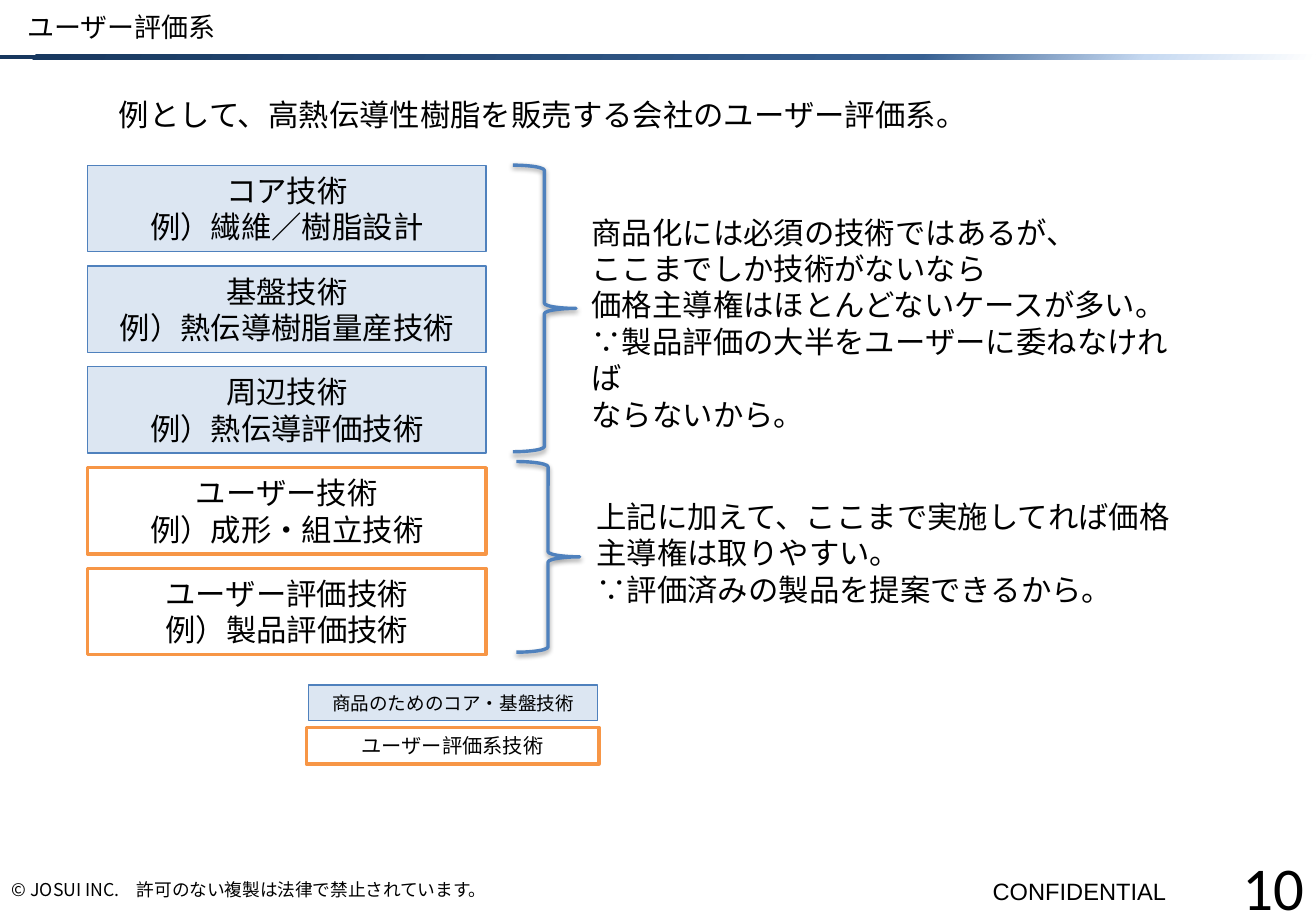
from dataclasses import dataclass

from lxml.etree import SubElement
from pptx import Presentation
from pptx.dml.color import RGBColor
from pptx.enum.shapes import MSO_SHAPE
from pptx.enum.text import MSO_ANCHOR, PP_ALIGN
from pptx.oxml.ns import qn
from pptx.shapes.autoshape import Shape
from pptx.slide import Slide
from pptx.util import Inches, Pt

COLORS = {
    "text": "000000",
    "core_fill": "DCE6F2",
    "core_line": "4F81BD",
    "user_fill": "FFFFFF",
    "user_line": "F79646",
    "shadow": "000000",
}
RULE_STOPS = [(0, "17375E"), (70, "376092"), (87, "C6D9F1"), (100, "FFFFFF")]
JAPANESE_FONT = "Noto Sans CJK JP"
STACK_LEFT, STACK_TOP, STACK_PITCH = 0.72, 1.36, 0.83
STACK_WIDTH, STACK_HEIGHT = 3.28, 0.71


@dataclass(frozen=True)
class Area:
    left: float
    top: float
    width: float
    height: float

    def lengths(self) -> list[int]:
        return [Inches(v) for v in (self.left, self.top, self.width, self.height)]


@dataclass(frozen=True)
class Caption:
    area: Area
    lines: tuple[str, ...]
    size: float = 18
    font: str = "Calibri"
    anchor: MSO_ANCHOR = MSO_ANCHOR.TOP
    align: PP_ALIGN = PP_ALIGN.LEFT
    wrap: bool = True


@dataclass(frozen=True)
class Technology:
    area: Area
    lines: tuple[str, ...]
    group: str
    size: float = 18


CAPTIONS = [
    Caption(Area(0.13, 0, 9.24, 0.44), ("ユーザー評価系",), 16, JAPANESE_FONT, MSO_ANCHOR.MIDDLE),
    Caption(Area(0.88, 0.74, 7.27, 0.4),
            ("例として、高熱伝導性樹脂を販売する会社のユーザー評価系。",), wrap=False),
    Caption(Area(4.77, 1.71, 5.14, 1.62), (
        "商品化には必須の技術ではあるが、",
        "ここまでしか技術がないなら",
        "価格主導権はほとんどないケースが多い。",
        "∵製品評価の大半をユーザーに委ねなければ",
        "ならないから。",
    )),
    Caption(Area(4.81, 4.05, 4.94, 1.01), (
        "上記に加えて、ここまで実施してれば価格主導権は取りやすい。",
        "∵評価済みの製品を提案できるから。",
    )),
    Caption(Area(0, 7.15, 9.75, 0.35),
            ("© JOSUI INC.　許可のない複製は法律で禁止されています。",),
            10.5, JAPANESE_FONT, MSO_ANCHOR.MIDDLE),
    Caption(Area(8.07, 7.17, 1.68, 0.34), ("CONFIDENTIAL",), 14, "Arial", wrap=False),
    Caption(Area(9.46, 7.12, 1.37, 0.35), ("10",), 36,
            anchor=MSO_ANCHOR.MIDDLE, align=PP_ALIGN.RIGHT),
]
STACK = [
    ("core", "コア技術", "例）繊維／樹脂設計"),
    ("core", "基盤技術", "例）熱伝導樹脂量産技術"),
    ("core", "周辺技術", "例）熱伝導評価技術"),
    ("user", "ユーザー技術", "例）成形・組立技術"),
    ("user", "ユーザー評価技術", "例）製品評価技術"),
]
LEGEND = [
    Technology(Area(2.54, 5.64, 2.38, 0.29), ("商品のためのコア・基盤技術",), "core", 11),
    Technology(Area(2.52, 5.99, 2.41, 0.3), ("ユーザー評価系技術",), "user", 12),
]
LINE_WIDTHS = {"core": 0.75, "user": 2}
BRACES = [Area(4.22, 1.36, 0.52, 2.36), Area(4.25, 3.8, 0.52, 1.57)]


def rgb(name: str) -> RGBColor:
    return RGBColor.from_string(COLORS[name])


def write_lines(shape: Shape, lines: tuple[str, ...], size: float, font: str,
                align: PP_ALIGN, anchor: MSO_ANCHOR, wrap: bool) -> None:
    frame = shape.text_frame
    for name, value in {"word_wrap": wrap, "vertical_anchor": anchor}.items():
        setattr(frame, name, value)
    frame.text = "\n".join(lines)
    for paragraph in frame.paragraphs:
        paragraph.alignment = align
        for run in paragraph.runs:
            for name, value in {"size": Pt(size), "name": font}.items():
                setattr(run.font, name, value)
            run.font.color.rgb = rgb("text")
            latin = run.font._element.find(qn("a:latin"))
            east_asian = latin.makeelement(qn("a:ea"), {"typeface": JAPANESE_FONT})
            latin.addnext(east_asian)


def add_caption(slide: Slide, caption: Caption) -> None:
    box = slide.shapes.add_textbox(*caption.area.lengths())
    write_lines(box, caption.lines, caption.size, caption.font,
                caption.align, caption.anchor, caption.wrap)


def add_technology(slide: Slide, technology: Technology) -> None:
    box = slide.shapes.add_shape(MSO_SHAPE.RECTANGLE, *technology.area.lengths())
    box.shadow.inherit = False
    box.fill.solid()
    box.fill.fore_color.rgb = rgb(f"{technology.group}_fill")
    box.line.color.rgb = rgb(f"{technology.group}_line")
    box.line.width = Pt(LINE_WIDTHS[technology.group])
    write_lines(box, technology.lines, technology.size, "Calibri",
                PP_ALIGN.CENTER, MSO_ANCHOR.MIDDLE, True)


def add_brace(slide: Slide, area: Area) -> None:
    brace = slide.shapes.add_shape(MSO_SHAPE.RIGHT_BRACE, *area.lengths())
    brace.fill.background()
    brace.line.color.rgb = rgb("core_line")
    brace.line.width = Pt(2)
    brace.shadow.inherit = False
    effects = brace._element.spPr.find(qn("a:effectLst"))
    shadow = SubElement(effects, qn("a:outerShdw"), {
        "blurRad": str(Pt(3.1)), "dist": str(Pt(1.6)), "dir": "5400000", "rotWithShape": "0"})
    color = SubElement(shadow, qn("a:srgbClr"), {"val": COLORS["shadow"]})
    SubElement(color, qn("a:alpha"), {"val": "38000"})


def add_title_rule(slide: Slide) -> None:
    """Draw the fading bar below the title."""
    rule = slide.shapes.add_shape(MSO_SHAPE.RECTANGLE, *Area(0, 0.45, 10.83, 0.04).lengths())
    rule.shadow.inherit = False
    rule.line.fill.background()
    rule.fill.gradient()
    rule.fill.gradient_angle = 330
    stops = rule._element.spPr.find(qn("a:gradFill")).find(qn("a:gsLst"))
    for stop in list(stops):
        stops.remove(stop)
    for percent, color in RULE_STOPS:
        stop = SubElement(stops, qn("a:gs"), {"pos": str(percent * 1000)})
        SubElement(stop, qn("a:srgbClr"), {"val": color})


def main() -> None:
    presentation = Presentation()
    presentation.slide_width = Inches(10.83)
    presentation.slide_height = Inches(7.5)
    slide = presentation.slides.add_slide(presentation.slide_layouts[6])

    add_title_rule(slide)
    for caption in CAPTIONS:
        add_caption(slide, caption)
    for level, (group, *lines) in enumerate(STACK):
        area = Area(STACK_LEFT, STACK_TOP + level * STACK_PITCH, STACK_WIDTH, STACK_HEIGHT)
        add_technology(slide, Technology(area, tuple(lines), group))
    for technology in LEGEND:
        add_technology(slide, technology)
    for area in BRACES:
        add_brace(slide, area)

    presentation.save("out.pptx")


if __name__ == "__main__":
    main()
